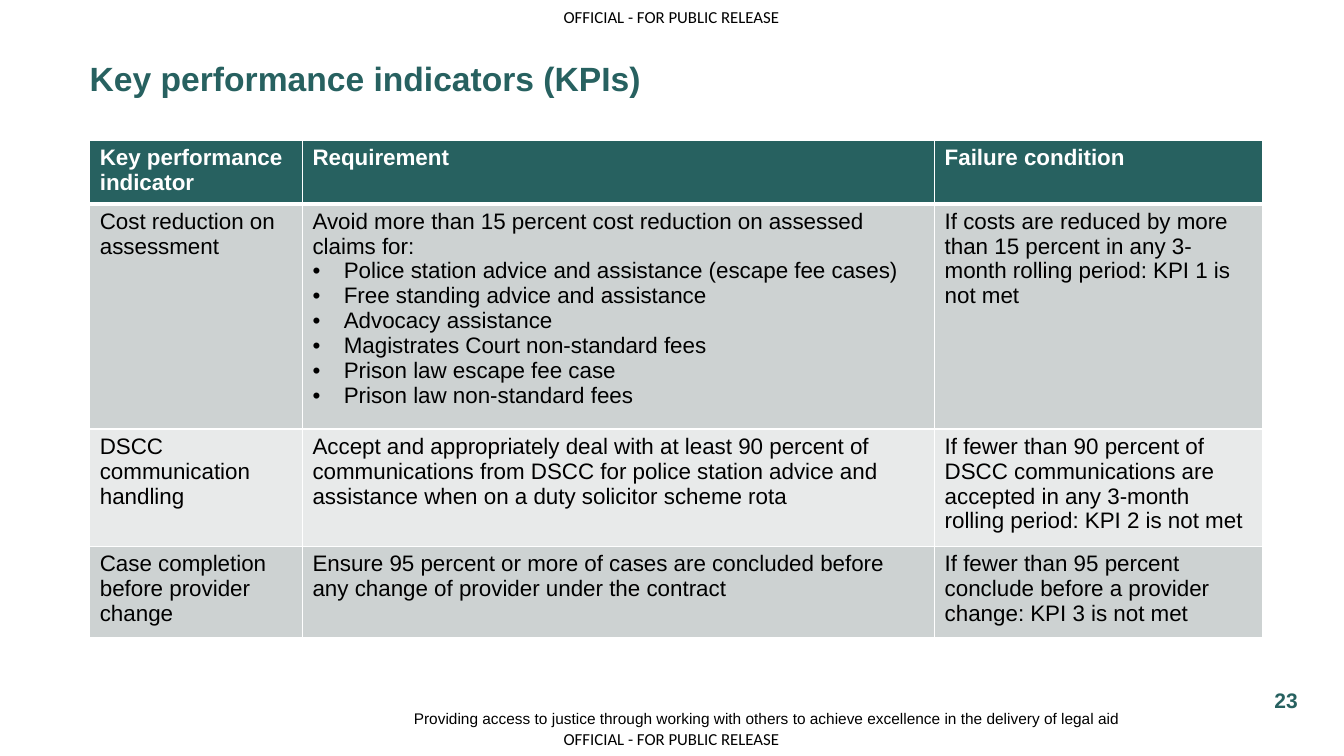
from dataclasses import dataclass

import lxml.etree
import pptx
import pptx.dml.color
import pptx.enum.text
import pptx.oxml.ns
import pptx.util

Inches = pptx.util.Inches
Align = pptx.enum.text.PP_ALIGN
Anchor = pptx.enum.text.MSO_ANCHOR
qn = pptx.oxml.ns.qn


@dataclass(frozen=True)
class Theme:
    font: str = "Arial"
    marking_font: str = "Calibri"
    green: str = "276160"
    black: str = "000000"
    white: str = "FFFFFF"
    bands: tuple = ("CDD2D2", "E8EAEA")
    title_size: float = 24
    table_size: float = 16
    number_size: float = 15
    marking_size: float = 12
    footer_size: float = 11
    border: float = 1
    header_border: float = 3


THEME = Theme()
MARKING = "OFFICIAL - FOR PUBLIC RELEASE"
COLUMN_WIDTHS = (2.11, 6.27, 3.25)
ROW_HEIGHTS = (0.59, 2.07, 1.08, 0.84)
BULLET_INDENT = 0.31
KPI_ROWS = [
    ("Key performance indicator", "Requirement", "Failure condition"),
    (
        "Cost reduction on assessment",
        (
            "Avoid more than 15 percent cost reduction on assessed claims for:",
            "Police station advice and assistance (escape fee cases)",
            "Free standing advice and assistance",
            "Advocacy assistance",
            "Magistrates Court non-standard fees",
            "Prison law escape fee case",
            "Prison law non-standard fees",
        ),
        "If costs are reduced by more than 15 percent in any 3-month rolling period: KPI 1 is not met",
    ),
    (
        "DSCC communication handling",
        "Accept and appropriately deal with at least 90 percent of communications from DSCC "
        "for police station advice and assistance when on a duty solicitor scheme rota",
        "If fewer than 90 percent of DSCC communications are accepted in any 3-month "
        "rolling period: KPI 2 is not met",
    ),
    (
        "Case completion before provider change",
        "Ensure 95 percent or more of cases are concluded before any change of provider "
        "under the contract",
        "If fewer than 95 percent conclude before a provider change: KPI 3 is not met",
    ),
]


def rgb(color):
    return pptx.dml.color.RGBColor.from_string(color)


def set_font(paragraph, size, color, bold=False, name=THEME.font):
    font = paragraph.font
    font.name = name
    font.size = pptx.util.Pt(size)
    font.bold = bold
    font.color.rgb = rgb(color)


def add_text(slide, box, text, size, color, bold=False, name=THEME.font,
             align=Align.LEFT, anchor=Anchor.MIDDLE, wrap=True):
    frame = slide.shapes.add_textbox(*map(Inches, box)).text_frame
    frame.margin_left = frame.margin_top = frame.margin_right = frame.margin_bottom = 0
    frame.word_wrap = wrap
    frame.vertical_anchor = anchor
    paragraph = frame.paragraphs[0]
    paragraph.text = text
    paragraph.alignment = align
    set_font(paragraph, size, color, bold, name)
    return paragraph


def add_bullet(paragraph):
    properties = paragraph._p.get_or_add_pPr()
    properties.set("marL", str(Inches(BULLET_INDENT)))
    properties.set("indent", str(-Inches(BULLET_INDENT)))
    bullet_font = lxml.etree.SubElement(properties, qn("a:buFont"))
    bullet_font.set("typeface", THEME.font)
    lxml.etree.SubElement(properties, qn("a:buChar")).set("char", "•")


def add_borders(cell, top, bottom):
    properties = cell._tc.get_or_add_tcPr()
    widths = {"L": THEME.border, "R": THEME.border, "T": top, "B": bottom}
    for side, width in widths.items():
        line = lxml.etree.SubElement(properties, qn(f"a:ln{side}"))
        line.set("w", str(pptx.util.Pt(width)))
        fill = lxml.etree.SubElement(line, qn("a:solidFill"))
        lxml.etree.SubElement(fill, qn("a:srgbClr")).set("val", THEME.white)


def fill_cell(cell, content, row_index):
    is_header = row_index == 0
    add_borders(
        cell,
        top=THEME.header_border if row_index == 1 else THEME.border,
        bottom=THEME.header_border if is_header else THEME.border,
    )
    cell.fill.solid()
    cell.fill.fore_color.rgb = rgb(THEME.green if is_header else THEME.bands[(row_index - 1) % 2])
    lines = (content,) if isinstance(content, str) else content
    for index, line in enumerate(lines):
        frame = cell.text_frame
        paragraph = frame.add_paragraph() if index else frame.paragraphs[0]
        paragraph.text = line
        if index:
            add_bullet(paragraph)
        set_font(paragraph, THEME.table_size, THEME.white if is_header else THEME.black, is_header)


def add_kpi_table(slide, left, top):
    box = (left, top, sum(COLUMN_WIDTHS), sum(ROW_HEIGHTS))
    table = slide.shapes.add_table(
        len(ROW_HEIGHTS), len(COLUMN_WIDTHS), *map(Inches, box)
    ).table
    for column, width in zip(table.columns, COLUMN_WIDTHS):
        column.width = Inches(width)
    for row, height in zip(table.rows, ROW_HEIGHTS):
        row.height = Inches(height)
    for row_index, contents in enumerate(KPI_ROWS):
        for column_index, content in enumerate(contents):
            fill_cell(table.cell(row_index, column_index), content, row_index)


def add_marking(slide, box):
    add_text(slide, box, MARKING, THEME.marking_size, THEME.black,
             name=THEME.marking_font, anchor=Anchor.TOP, wrap=False)


def add_footer(slide, box):
    left, top, width, height = box
    motto = add_text(
        slide, (left, top + 0.28, 7.88, 0.2),
        "Providing access to justice through working with others to achieve excellence "
        "in the delivery of legal aid",
        THEME.footer_size, THEME.black, align=Align.RIGHT,
    )
    motto.space_after = pptx.util.Pt(6)
    add_text(slide, (left + width - 0.49, top, 0.49, 0.4), "23",
             THEME.number_size, THEME.green, bold=True, align=Align.CENTER)


def build_kpi_slide(presentation):
    slide = presentation.slides.add_slide(presentation.slide_layouts[6])
    for top in (0.07, 7.23):
        add_marking(slide, (5.59, top, 2.18, 0.2))
    add_text(slide, (0.89, 0.28, 11.73, 0.98), "Key performance indicators (KPIs)",
             THEME.title_size, THEME.green, bold=True)
    add_kpi_table(slide, 0.89, 1.39)
    add_footer(slide, (3.23, 6.75, 9.77, 0.48))


def main():
    presentation = pptx.Presentation()
    presentation.slide_width = Inches(13.33)
    presentation.slide_height = Inches(7.5)
    build_kpi_slide(presentation)
    presentation.save("out.pptx")


if __name__ == "__main__":
    main()
